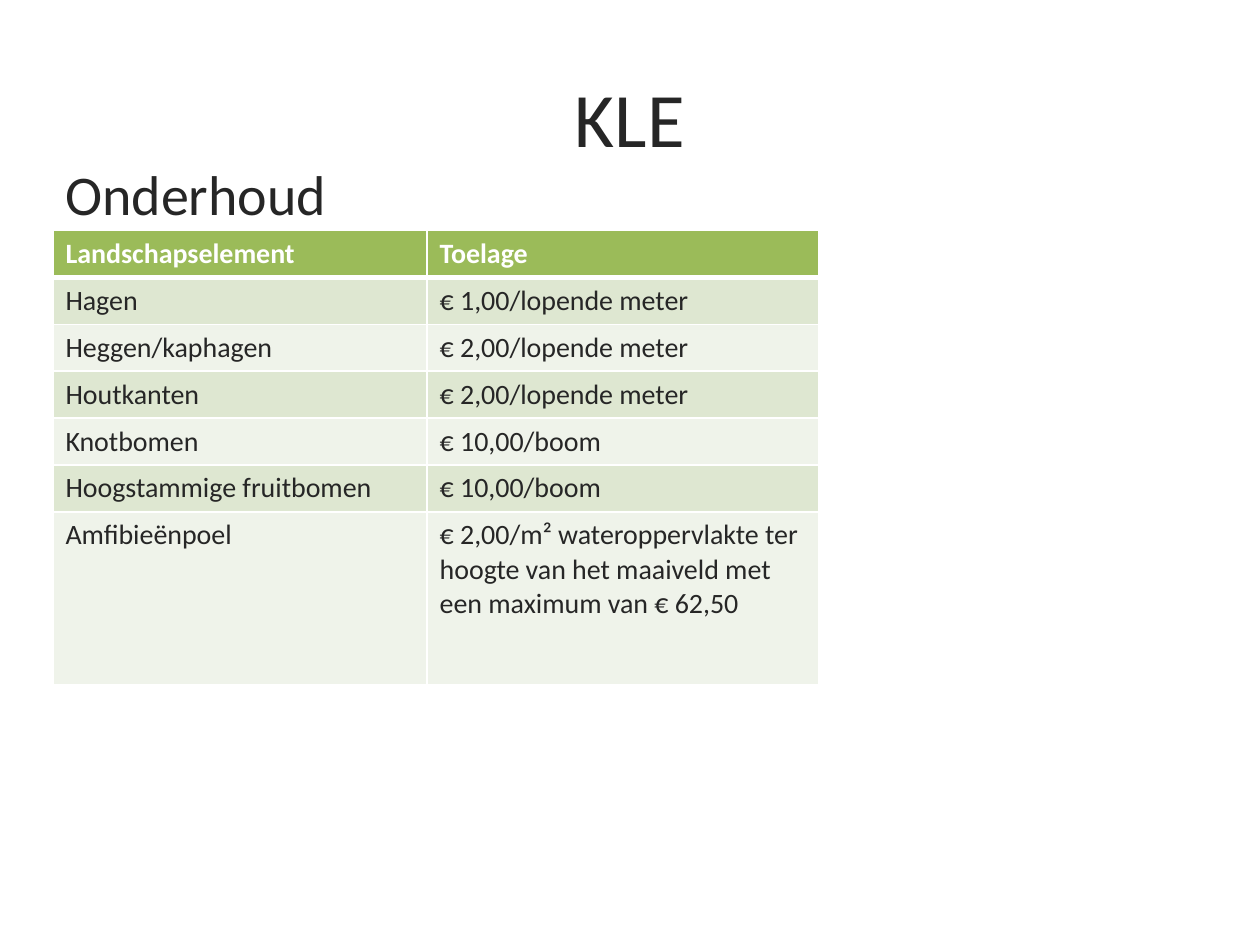
"""Build the KLE slide with the maintenance allowances per landscape element."""
from typing import NamedTuple

from lxml import etree
from pptx import Presentation
from pptx.dml.color import RGBColor
from pptx.enum.text import MSO_ANCHOR, PP_ALIGN
from pptx.oxml.ns import qn
from pptx.util import Inches, Pt

CENTER, LEFT = PP_ALIGN.CENTER, PP_ALIGN.LEFT
MIDDLE, TOP = MSO_ANCHOR.MIDDLE, MSO_ANCHOR.TOP
TITLE_ONLY = 5
DARK, WHITE, GREEN = "262626", "FFFFFF", "9BBB59"
BANDS = ("DEE7D1", "EFF3EA")
COLUMN_WIDTHS = (2.97, 3.11)
ROW_HEIGHT, LAST_ROW_HEIGHT = 0.35, 1.37
THIN, THICK = 1, 3


class Allowance(NamedTuple):
    element: str
    amount: str


HEADER = Allowance("Landschapselement", "Toelage")
ALLOWANCES = (
    Allowance("Hagen", "€ 1,00/lopende meter"),
    Allowance("Heggen/kaphagen", "€ 2,00/lopende meter"),
    Allowance("Houtkanten", "€ 2,00/lopende meter"),
    Allowance("Knotbomen", "€ 10,00/boom"),
    Allowance("Hoogstammige fruitbomen", "€ 10,00/boom"),
    Allowance(
        "Amfibieënpoel",
        "€ 2,00/m² wateroppervlakte ter hoogte van het maaiveld met een maximum van € 62,50",
    ),
)


def color(value: str) -> RGBColor:
    return RGBColor.from_string(value)


def write(frame, text: str, size: int, ink: str = DARK, bold: bool = False, align=LEFT) -> None:
    paragraph = frame.paragraphs[0]
    paragraph.alignment = align
    span = paragraph.add_run()
    span.text = text
    for name, value in {"name": "Calibri", "size": Pt(size), "bold": bold}.items():
        setattr(span.font, name, value)
    span.font.color.rgb = color(ink)


def place(shape, left: float, top: float, width: float, height: float) -> None:
    lengths = {"left": left, "top": top, "width": width, "height": height}
    for name, value in lengths.items():
        setattr(shape, name, Inches(value))


def add_borders(cell, top: int, bottom: int) -> None:
    properties = cell._tc.get_or_add_tcPr()
    for side, width in {"L": THIN, "R": THIN, "T": top, "B": bottom}.items():
        line = etree.SubElement(properties, qn(f"a:ln{side}"), w=str(Pt(width)))
        fill = etree.SubElement(line, qn("a:solidFill"))
        etree.SubElement(fill, qn("a:srgbClr"), val=WHITE)


def add_allowance_table(page, left: float, top: float) -> None:
    rows = (HEADER, *ALLOWANCES)
    heights = [ROW_HEIGHT] * len(ALLOWANCES) + [LAST_ROW_HEIGHT]
    table = page.shapes.add_table(
        len(rows), len(COLUMN_WIDTHS), Inches(left), Inches(top),
        Inches(sum(COLUMN_WIDTHS)), Inches(sum(heights)),
    ).table
    for column, width in zip(table.columns, COLUMN_WIDTHS):
        column.width = Inches(width)
    for index, (allowance, height) in enumerate(zip(rows, heights)):
        is_header = index == 0
        table.rows[index].height = Inches(height)
        for cell, text in zip(table.rows[index].cells, allowance):
            write(cell.text_frame, text, 16, WHITE if is_header else DARK, is_header)
            add_borders(cell, THICK if index == 1 else THIN, THICK if is_header else THIN)
            cell.fill.solid()
            cell.fill.fore_color.rgb = color(GREEN if is_header else BANDS[(index - 1) % 2])


def main() -> None:
    deck = Presentation()
    deck.slide_width, deck.slide_height = Inches(10), Inches(7.5)
    page = deck.slides.add_slide(deck.slide_layouts[TITLE_ONLY])

    title = page.shapes.title
    place(title, 0.5, 0.3, 9, 1.25)
    title.text_frame.vertical_anchor = MIDDLE
    write(title.text_frame, "KLE", 44, align=CENTER)

    add_allowance_table(page, 0.42, 1.83)

    box = page.shapes.add_textbox(Inches(0.42), Inches(1.22), Inches(9.07), Inches(0.64))
    box.text_frame.word_wrap = True
    box.text_frame.vertical_anchor = TOP
    write(box.text_frame, "Onderhoud", 32)

    deck.save("out.pptx")


if __name__ == "__main__":
    main()
